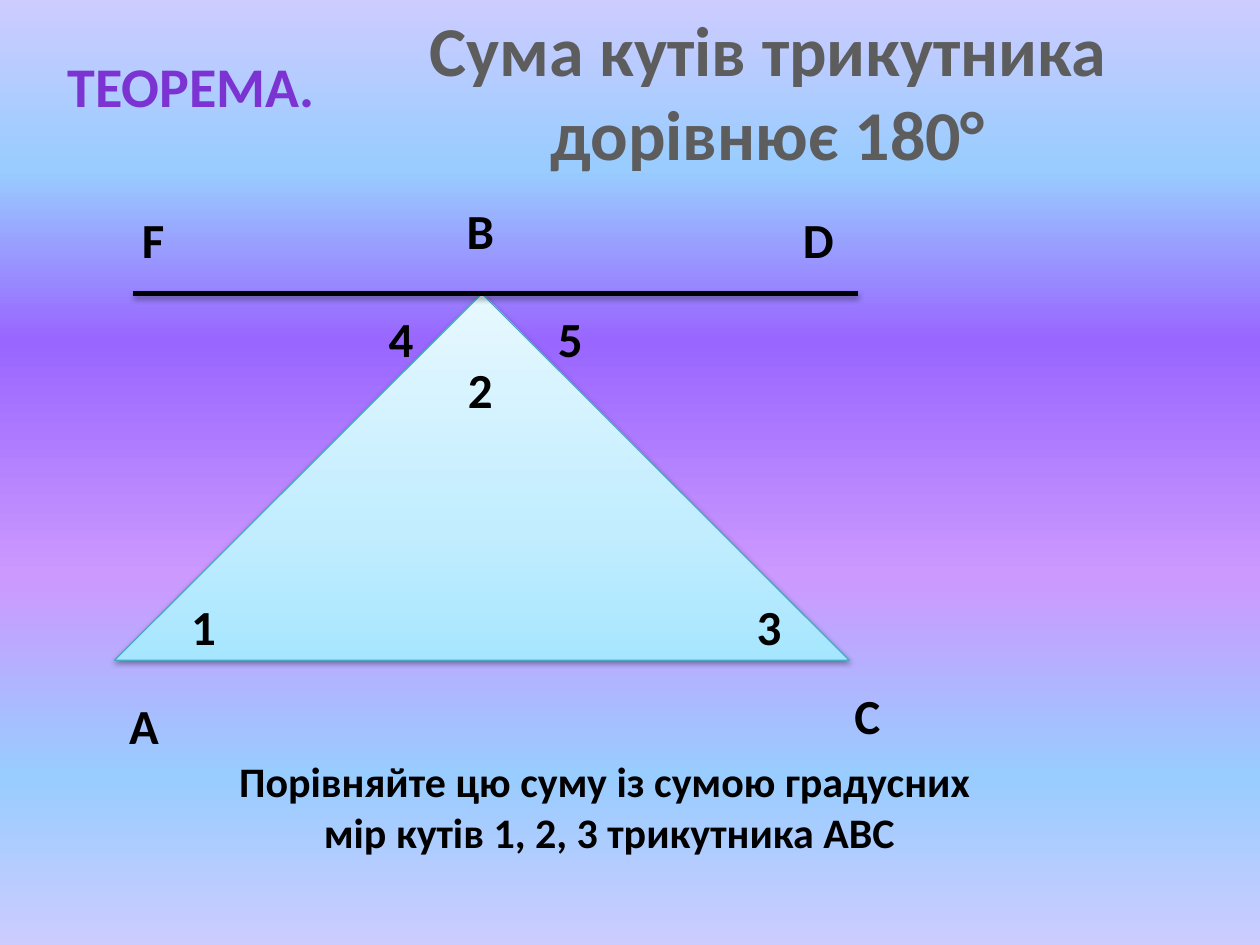
"""Build the slide on the theorem about the angle sum of a triangle."""
import pptx
import pptx.dml.color
import pptx.enum.dml
import pptx.enum.shapes
import pptx.enum.text
import pptx.oxml
import pptx.oxml.ns
import pptx.util
from lxml import etree

Cm = pptx.util.Cm
Pt = pptx.util.Pt
RGBColor = pptx.dml.color.RGBColor
ANCHOR = pptx.enum.text.MSO_ANCHOR

BLACK = RGBColor(0x00, 0x00, 0x00)
GRAY = RGBColor(0x5D, 0x5D, 0x5D)
VIOLET = RGBColor(0x7B, 0x34, 0xD2)
TEAL = RGBColor(0x46, 0xAA, 0xC5)

SKY = [(0, "CCCCFF"), (18, "99CCFF"), (36, "9966FF"),
       (61, "CC99FF"), (82, "99CCFF"), (100, "CCCCFF")]
ICE = [(0, "A7E6FF"), (35, "C1EDFF"), (100, "E7F8FF")]

TITLE = ("Сума кутів трикутника\vдорівнює 180°", (5.56, 0, 19.84, 3.68), 40, GRAY)
CAPTIONS = [
    ("ТЕОРЕМА.", (1.09, 0.91, 5.54, 1.63), 32, VIOLET),
    ("Порівняйте цю суму із сумою градусних \vмір кутів 1, 2, 3 трикутника ABC",
     (4.5, 15.11, 15.57, 2.31), 24, BLACK),
]
TRIANGLE = (2.31, 5.92, 14.81, 7.39)
PARALLEL = (2.69, 5.92, 17.3, 5.92)
LABEL_SIZE = (1.19, 1.4)
LABELS = [
    ("А", 2.31, 13.92), ("В", 9.09, 3.94), ("С", 16.89, 13.72),
    ("F", 2.49, 4.11), ("D", 15.9, 4.11),
    ("1", 3.51, 11.91), ("2", 9.09, 7.14), ("3", 14.91, 11.91),
    ("4", 7.49, 6.12), ("5", 10.9, 6.12),
]


def lengths(values):
    return [Cm(value) for value in values]


def paint_gradient(fill, owner, stops, angle):
    fill.gradient()
    fill.gradient_angle = angle
    stop_list = owner.find(".//" + pptx.oxml.ns.qn("a:gsLst"))
    for stop in list(stop_list):
        stop_list.remove(stop)
    for position, color in stops:
        stop = etree.SubElement(stop_list, pptx.oxml.ns.qn("a:gs"), pos=str(position * 1000))
        etree.SubElement(stop, pptx.oxml.ns.qn("a:srgbClr"), val=color)


def add_shadow(shape, distance, opacity):
    shape._element.spPr.append(pptx.oxml.parse_xml(
        f'<a:effectLst {pptx.oxml.ns.nsdecls("a")}>'
        f'<a:outerShdw blurRad="{Pt(3.1)}" dist="{Pt(distance)}" dir="5400000" rotWithShape="0">'
        f'<a:srgbClr val="000000"><a:alpha val="{opacity * 1000}"/></a:srgbClr>'
        '</a:outerShdw></a:effectLst>'))


def write(box, text, size, color, **frame_format):
    frame = box.text_frame
    frame.text = text
    for name, value in frame_format.items():
        setattr(frame, name, value)
    para = frame.paragraphs[0]
    para.alignment = pptx.enum.text.PP_ALIGN.CENTER
    font_format = {"name": "Calibri", "size": Pt(size), "bold": True}
    for span in para.runs:
        for name, value in font_format.items():
            setattr(span.font, name, value)
        span.font.color.rgb = color


def main():
    deck = pptx.Presentation()
    deck.slide_width, deck.slide_height = Cm(25.4), Cm(19.05)
    page = deck.slides.add_slide(deck.slide_layouts[5])
    paint_gradient(page.background.fill, page._element, SKY, 270)

    text, place, size, color = TITLE
    title = page.shapes.title
    title.left, title.top, title.width, title.height = lengths(place)
    write(title, text, size, color, word_wrap=True, vertical_anchor=ANCHOR.TOP)

    triangle = page.shapes.add_shape(
        pptx.enum.shapes.MSO_SHAPE.ISOSCELES_TRIANGLE, *lengths(TRIANGLE))
    paint_gradient(triangle.fill, triangle._element, ICE, 90)
    triangle.line.color.rgb = TEAL
    triangle.line.width = Pt(0.75)
    add_shadow(triangle, 1.6, 38)

    parallel = page.shapes.add_connector(
        pptx.enum.shapes.MSO_CONNECTOR.STRAIGHT, *lengths(PARALLEL))
    parallel.line.color.rgb = BLACK
    parallel.line.width = Pt(3)
    add_shadow(parallel, 1.8, 35)

    for text, left, top in LABELS:
        box = page.shapes.add_textbox(*lengths((left, top) + LABEL_SIZE))
        write(box, text, 28, BLACK, word_wrap=True, vertical_anchor=ANCHOR.MIDDLE,
              margin_left=0, margin_right=0)

    for text, place, size, color in CAPTIONS:
        box = page.shapes.add_textbox(*lengths(place))
        write(box, text, size, color, word_wrap=False)

    deck.save("out.pptx")


if __name__ == "__main__":
    main()
